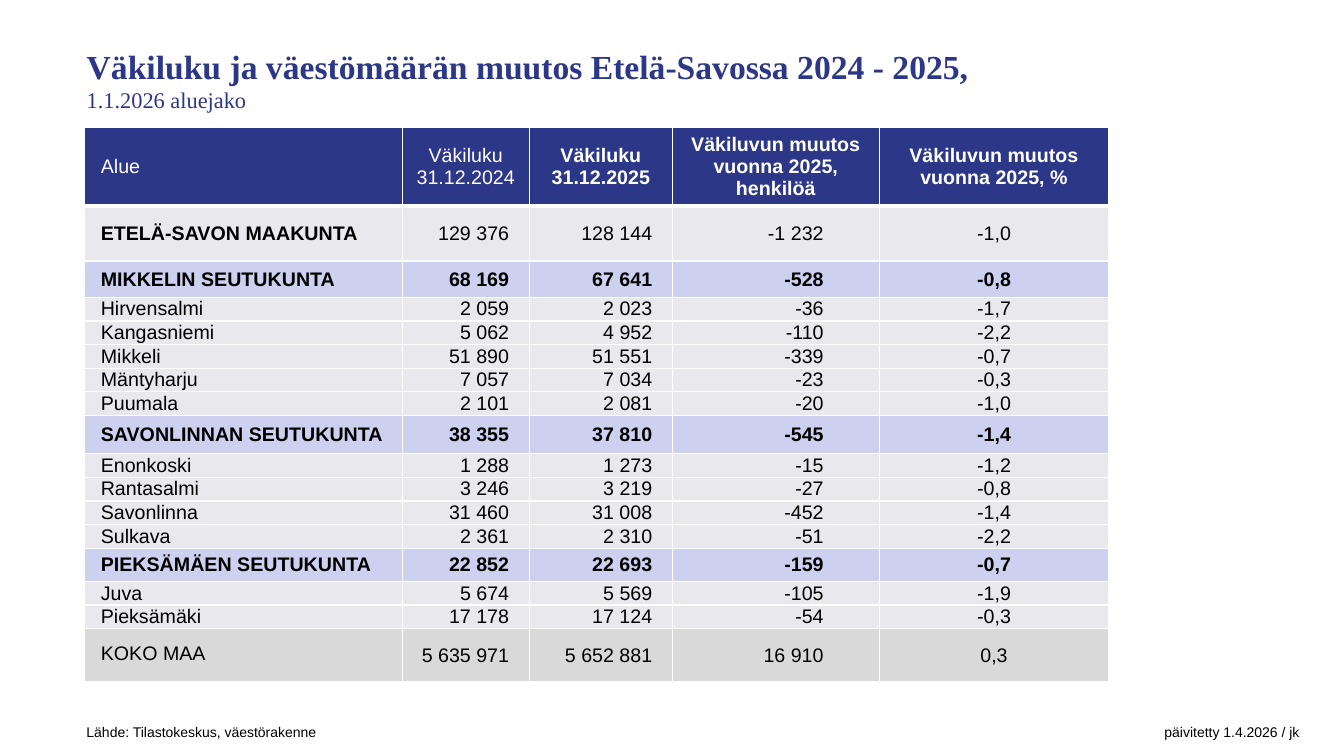
from lxml import etree
from pptx import Presentation
from pptx import util as u
from pptx.dml.color import RGBColor
from pptx.enum import text
from pptx.oxml.ns import qn

COLOURS = {
    "navy": "2D3787", "white": "FFFFFF", "black": "000000",
    "municipality": "E8E8ED", "subregion": "CDD1EF", "country": "D9D9D9",
}
ALIGN = text.PP_ALIGN
HEADINGS = [
    "Alue", "Väkiluku 31.12.2024", "Väkiluku 31.12.2025",
    "Väkiluvun muutos vuonna 2025, henkilöä", "Väkiluvun muutos vuonna 2025, %",
]
REGIONS = [
    ("ETELÄ-SAVON MAAKUNTA", "129 376", "128 144", "-1 232", "-1,0"),
    ("MIKKELIN SEUTUKUNTA", "68 169", "67 641", "-528", "-0,8"),
    ("Hirvensalmi", "2 059", "2 023", "-36", "-1,7"),
    ("Kangasniemi", "5 062", "4 952", "-110", "-2,2"),
    ("Mikkeli", "51 890", "51 551", "-339", "-0,7"),
    ("Mäntyharju", "7 057", "7 034", "-23", "-0,3"),
    ("Puumala", "2 101", "2 081", "-20", "-1,0"),
    ("SAVONLINNAN SEUTUKUNTA", "38 355", "37 810", "-545", "-1,4"),
    ("Enonkoski", "1 288", "1 273", "-15", "-1,2"),
    ("Rantasalmi", "3 246", "3 219", "-27", "-0,8"),
    ("Savonlinna", "31 460", "31 008", "-452", "-1,4"),
    ("Sulkava", "2 361", "2 310", "-51", "-2,2"),
    ("PIEKSÄMÄEN SEUTUKUNTA", "22 852", "22 693", "-159", "-0,7"),
    ("Juva", "5 674", "5 569", "-105", "-1,9"),
    ("Pieksämäki", "17 178", "17 124", "-54", "-0,3"),
    ("KOKO MAA", "5 635 971", "5 652 881", "16 910", "0,3"),
]
COLUMN_WIDTHS = [3.15, 1.26, 1.42, 2.05, 2.28]
COLUMN_ALIGN = [ALIGN.LEFT, ALIGN.RIGHT, ALIGN.RIGHT, ALIGN.RIGHT, ALIGN.CENTER]
RIGHT_INSETS = [0, 0.2, 0.2, 0.55, 0]
HEADING_HEIGHT = 0.77
# Rows not listed here are municipalities, which share one height.
TALL_ROWS = {1: 0.55, 2: 0.36, 8: 0.38, 13: 0.33, 16: 0.53}
MUNICIPALITY_HEIGHT = 2.58 / (len(REGIONS) - len(TALL_ROWS))


def apply(target, values):
    for name, value in values.items():
        setattr(target, name, value)


class StatisticsSlide:
    def __init__(self, deck):
        self.slide = deck.slides.add_slide(deck.slide_layouts[5])

    def wording(self, paragraph, words, size, colour, font="Arial", bold=False, align=ALIGN.LEFT):
        """Add one styled run to the paragraph."""
        paragraph.alignment = align
        run = paragraph.add_run()
        run.text = words
        apply(run.font, {"name": font, "size": u.Pt(size), "bold": bold})
        run.font.color.rgb = RGBColor.from_string(COLOURS[colour])

    def title(self, place, heading, subheading):
        title = self.slide.shapes.title
        apply(title, dict(zip(("left", "top", "width", "height"), map(u.Inches, place))))
        frame = title.text_frame
        apply(frame, {"vertical_anchor": text.MSO_ANCHOR.MIDDLE, "word_wrap": True,
                      "auto_size": text.MSO_AUTO_SIZE.NONE})
        self.wording(frame.paragraphs[0], heading, 24, "navy", "Times New Roman", True)
        self.wording(frame.add_paragraph(), subheading, 16, "navy", "Times New Roman")
        for paragraph in frame.paragraphs:
            paragraph.space_before = u.Pt(0)

    def footer(self, place, source, updated, tab):
        """Source on the left, update note ending at a right tab stop."""
        frame = self.slide.shapes.add_textbox(*map(u.Inches, place)).text_frame
        frame.word_wrap = True
        paragraph = frame.paragraphs[0]
        stops = etree.SubElement(paragraph._p.get_or_add_pPr(), qn("a:tabLst"))
        etree.SubElement(stops, qn("a:tab"), pos=str(u.Inches(tab)), algn="r")
        self.wording(paragraph, f"{source}\t{updated}", 10, "black")

    def borders(self, cell, widths):
        properties = cell._tc.get_or_add_tcPr()
        for side, width in widths.items():
            line = etree.SubElement(properties, qn(f"a:ln{side}"), w=str(u.Pt(width)))
            fill = etree.SubElement(line, qn("a:solidFill"))
            etree.SubElement(fill, qn("a:srgbClr"), val=COLOURS["white"])

    def cell(self, cell, words, fill, insets, widths, **style):
        self.borders(cell, widths)
        cell.fill.solid()
        cell.fill.fore_color.rgb = RGBColor.from_string(COLOURS[fill])
        sides = ("margin_left", "margin_top", "margin_right", "margin_bottom")
        apply(cell, dict(zip(sides, map(u.Inches, insets))))
        cell.vertical_anchor = text.MSO_ANCHOR.MIDDLE
        self.wording(cell.text_frame.paragraphs[0], words, 14, **style)

    def population_table(self, place):
        row_count = len(REGIONS) + 1
        table = self.slide.shapes.add_table(
            row_count, len(HEADINGS), *map(u.Inches, place)).table
        table.horz_banding = False
        for column, width in zip(table.columns, COLUMN_WIDTHS):
            column.width = u.Inches(width)
        for index, row in enumerate(table.rows):
            height = TALL_ROWS.get(index, MUNICIPALITY_HEIGHT) if index else HEADING_HEIGHT
            row.height = u.Inches(height)

        for col, heading in enumerate(HEADINGS):
            self.cell(table.cell(0, col), heading, "navy",
                      (0.04 if col else 0.16, 0.04, 0.04, 0.04),
                      {"L": 1, "R": 1, "T": 1, "B": 3}, colour="white",
                      bold=col > 1, align=ALIGN.CENTER if col else ALIGN.LEFT)

        for row, region in enumerate(REGIONS, 1):
            subregion = region[0].endswith("SEUTUKUNTA")
            country = row == row_count - 1
            fill = "subregion" if subregion else "country" if country else "municipality"
            for col, value in enumerate(region):
                self.cell(table.cell(row, col), value, fill,
                          (0 if col else 0.16, 0, RIGHT_INSETS[col],
                           0.04 if country and col == 0 else 0),
                          {"L": 1, "R": 1, "T": 3 if row == 1 else 1, "B": 1},
                          colour="black", bold=subregion or (row == 1 and col == 0),
                          align=COLUMN_ALIGN[col])


def main():
    deck = Presentation()
    apply(deck, {"slide_width": u.Inches(13.33), "slide_height": u.Inches(7.5)})
    population = StatisticsSlide(deck)
    population.title((0.76, 0.34, 12.36, 0.89),
                     "Väkiluku ja väestömäärän muutos Etelä-Savossa 2024 - 2025,",
                     "1.1.2026 aluejako")
    population.footer((0.76, 7.13, 12.44, 0.27), "Lähde: Tilastokeskus, väestörakenne",
                      "päivitetty 1.4.2026 / jk", 12.03)
    population.population_table((0.84, 1.26, 10.16, 5.5))
    deck.save("out.pptx")


if __name__ == "__main__":
    main()
